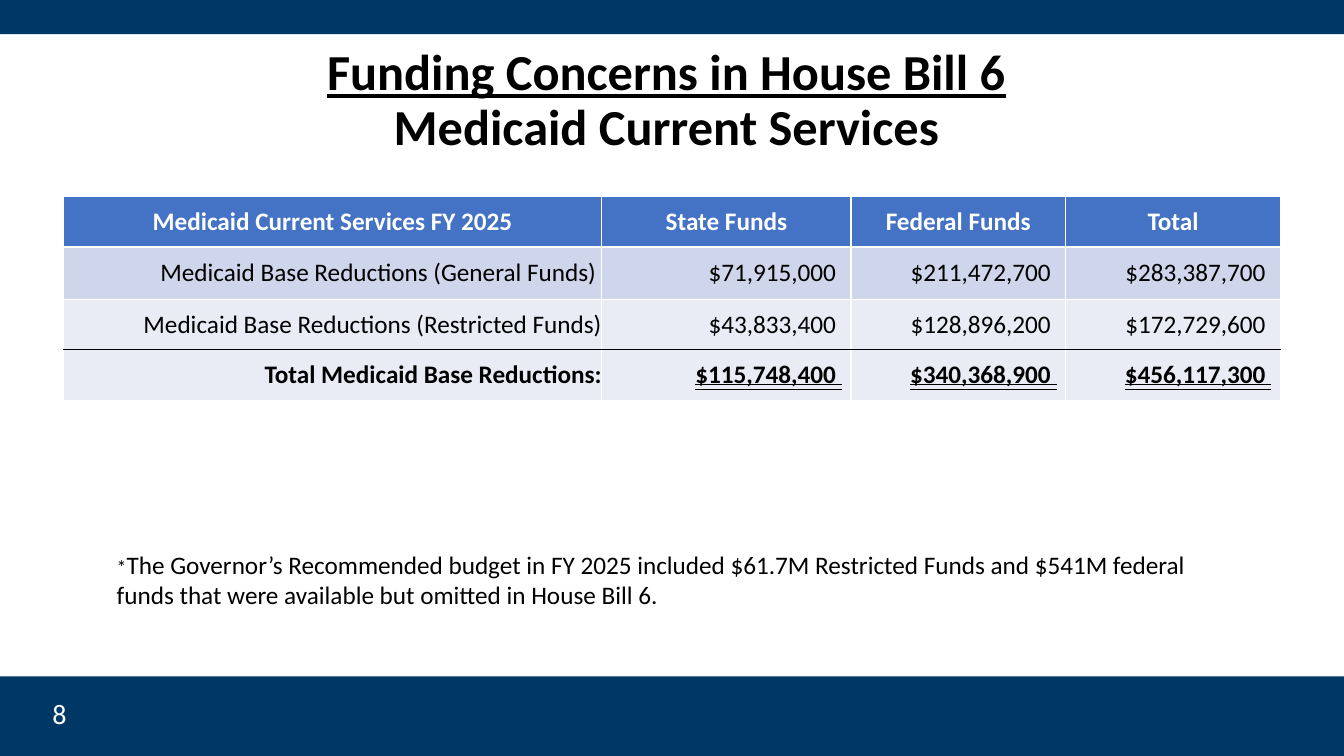
from dataclasses import dataclass

from lxml.etree import SubElement
from pptx import Presentation
from pptx.dml.color import RGBColor
from pptx.enum.shapes import MSO_SHAPE
from pptx.enum.text import MSO_ANCHOR, MSO_AUTO_SIZE, MSO_UNDERLINE, PP_ALIGN
from pptx.oxml.ns import qn
from pptx.slide import Slide
from pptx.table import _Cell as Cell
from pptx.text.text import Font
from pptx.util import Inches, Pt

NAVY = RGBColor(0x00, 0x38, 0x65)
HEADER_BLUE = RGBColor(0x44, 0x72, 0xC4)
BAND_DARK = RGBColor(0xCF, 0xD5, 0xEA)
BAND_LIGHT = RGBColor(0xE9, 0xEB, 0xF5)
BLACK = RGBColor(0, 0, 0)
WHITE = RGBColor(0xFF, 0xFF, 0xFF)
TYPEFACE = "Calibri"
SLIDE_WIDTH, SLIDE_HEIGHT = 13.33, 7.5


@dataclass
class Band:
    top: float
    height: float


@dataclass
class FundRow:
    texts: tuple[str, ...]
    height: float
    fill: RGBColor
    color: RGBColor = BLACK
    bold: bool = False
    header: bool = False
    underline: bool | MSO_UNDERLINE = False
    top_line: tuple[RGBColor, float] = (WHITE, 1)
    bottom_line: tuple[RGBColor, float] = (WHITE, 1)


BANDS = [Band(0, 0.34), Band(6.71, 0.79)]
COLUMN_WIDTHS = [5.34, 2.47, 2.13, 2.13]
FUND_ROWS = [
    FundRow(("Medicaid Current Services FY 2025", "State Funds", "Federal Funds", "Total"),
            0.5, HEADER_BLUE, WHITE, bold=True, header=True, bottom_line=(WHITE, 1.5)),
    FundRow(("Medicaid Base Reductions (General Funds) ",
             "$71,915,000 ", "$211,472,700 ", "$283,387,700 "),
            0.52, BAND_DARK, top_line=(WHITE, 1.5)),
    FundRow(("Medicaid Base Reductions (Restricted Funds)",
             "$43,833,400 ", "$128,896,200 ", "$172,729,600 "),
            0.5, BAND_LIGHT, bottom_line=(BLACK, 1)),
    FundRow(("Total Medicaid Base Reductions:",
             "$115,748,400 ", "$340,368,900 ", "$456,117,300 "),
            0.5, BAND_LIGHT, bold=True, underline=MSO_UNDERLINE.DOUBLE_LINE,
            top_line=(BLACK, 1)),
]


def set_font(font: Font, size: float, color: RGBColor = BLACK, bold: bool = False) -> None:
    font.name = TYPEFACE
    font.size = Pt(size)
    font.bold = bold
    font.color.rgb = color


def add_band(slide: Slide, band: Band) -> None:
    bar = slide.shapes.add_shape(MSO_SHAPE.RECTANGLE, 0, Inches(band.top),
                                 Inches(SLIDE_WIDTH), Inches(band.height))
    bar.shadow.inherit = False
    bar.fill.solid()
    bar.fill.fore_color.rgb = NAVY
    bar.line.fill.background()


def set_borders(cell: Cell, row: FundRow) -> None:
    """Insert the cell's edge lines, which must precede its fill."""
    properties = cell._tc.get_or_add_tcPr()
    edges = [("a:lnL", (WHITE, 1)), ("a:lnR", (WHITE, 1)),
             ("a:lnT", row.top_line), ("a:lnB", row.bottom_line)]
    for position, (tag, (color, width)) in enumerate(edges):
        edge = SubElement(properties, qn(tag), w=str(Pt(width)))
        solid = SubElement(edge, qn("a:solidFill"))
        SubElement(solid, qn("a:srgbClr"), val=str(color))
        properties.insert(position, edge)


def fill_cell(cell: Cell, text: str, row: FundRow, is_label: bool) -> None:
    cell.fill.solid()
    cell.fill.fore_color.rgb = row.fill
    set_borders(cell, row)
    cell.margin_left = cell.margin_top = cell.margin_bottom = 0
    cell.margin_right = 0 if is_label or row.header else Inches(0.09)
    cell.vertical_anchor = MSO_ANCHOR.MIDDLE
    cell.text = text
    paragraph = cell.text_frame.paragraphs[0]
    paragraph.alignment = PP_ALIGN.CENTER if row.header else PP_ALIGN.RIGHT
    set_font(paragraph.font, 18, row.color, row.bold)
    if not is_label:
        paragraph.font.underline = row.underline


def add_title(slide: Slide) -> None:
    title = slide.shapes.title
    title.left, title.top = Inches(1.59), Inches(0.49)
    title.width, title.height = Inches(10.04), Inches(1.04)
    frame = title.text_frame
    frame.auto_size = MSO_AUTO_SIZE.NONE
    frame.vertical_anchor = MSO_ANCHOR.MIDDLE
    paragraph = frame.paragraphs[0]
    paragraph.text = "Funding Concerns in House Bill 6\vMedicaid Current Services"
    paragraph.alignment = PP_ALIGN.CENTER
    paragraph.line_spacing = 0.9
    set_font(paragraph.font, 36, bold=True)
    paragraph.runs[0].font.underline = True


def add_fund_table(slide: Slide) -> None:
    table = slide.shapes.add_table(
        len(FUND_ROWS), len(COLUMN_WIDTHS), Inches(0.63), Inches(1.95),
        Inches(sum(COLUMN_WIDTHS)), Inches(sum(row.height for row in FUND_ROWS))).table
    for column, width in zip(table.columns, COLUMN_WIDTHS):
        column.width = Inches(width)
    for row_index, row in enumerate(FUND_ROWS):
        table.rows[row_index].height = Inches(row.height)
        for column_index, text in enumerate(row.texts):
            fill_cell(table.cell(row_index, column_index), text, row, column_index == 0)


def add_footnote(slide: Slide) -> None:
    footnote = slide.shapes.add_textbox(Inches(1.06), Inches(5.4), Inches(11.3), Inches(0.71))
    footnote.text_frame.word_wrap = True
    paragraph = footnote.text_frame.paragraphs[0]
    note = ("The Governor’s Recommended budget in FY 2025 included $61.7M Restricted Funds "
            "and $541M federal funds that were available but omitted in House Bill 6.")
    for text, size in (("*", 14), (note, 18)):
        run = paragraph.add_run()
        run.text = text
        set_font(run.font, size)


def add_page_number(slide: Slide) -> None:
    page_number = slide.shapes.add_textbox(Inches(0.26), Inches(6.95), Inches(0.5), Inches(0.26))
    frame = page_number.text_frame
    frame.word_wrap = True
    frame.vertical_anchor = MSO_ANCHOR.MIDDLE
    paragraph = frame.paragraphs[0]
    paragraph.text = "8"
    paragraph.alignment = PP_ALIGN.RIGHT
    set_font(paragraph.font, 20, WHITE)


def main() -> None:
    deck = Presentation()
    deck.slide_width, deck.slide_height = Inches(SLIDE_WIDTH), Inches(SLIDE_HEIGHT)
    slide = deck.slides.add_slide(deck.slide_layouts.get_by_name("Title Only"))

    # Top and bottom bands
    for band in BANDS:
        add_band(slide, band)

    # Content
    add_title(slide)
    add_fund_table(slide)
    add_footnote(slide)
    add_page_number(slide)

    deck.save("out.pptx")


if __name__ == "__main__":
    main()
